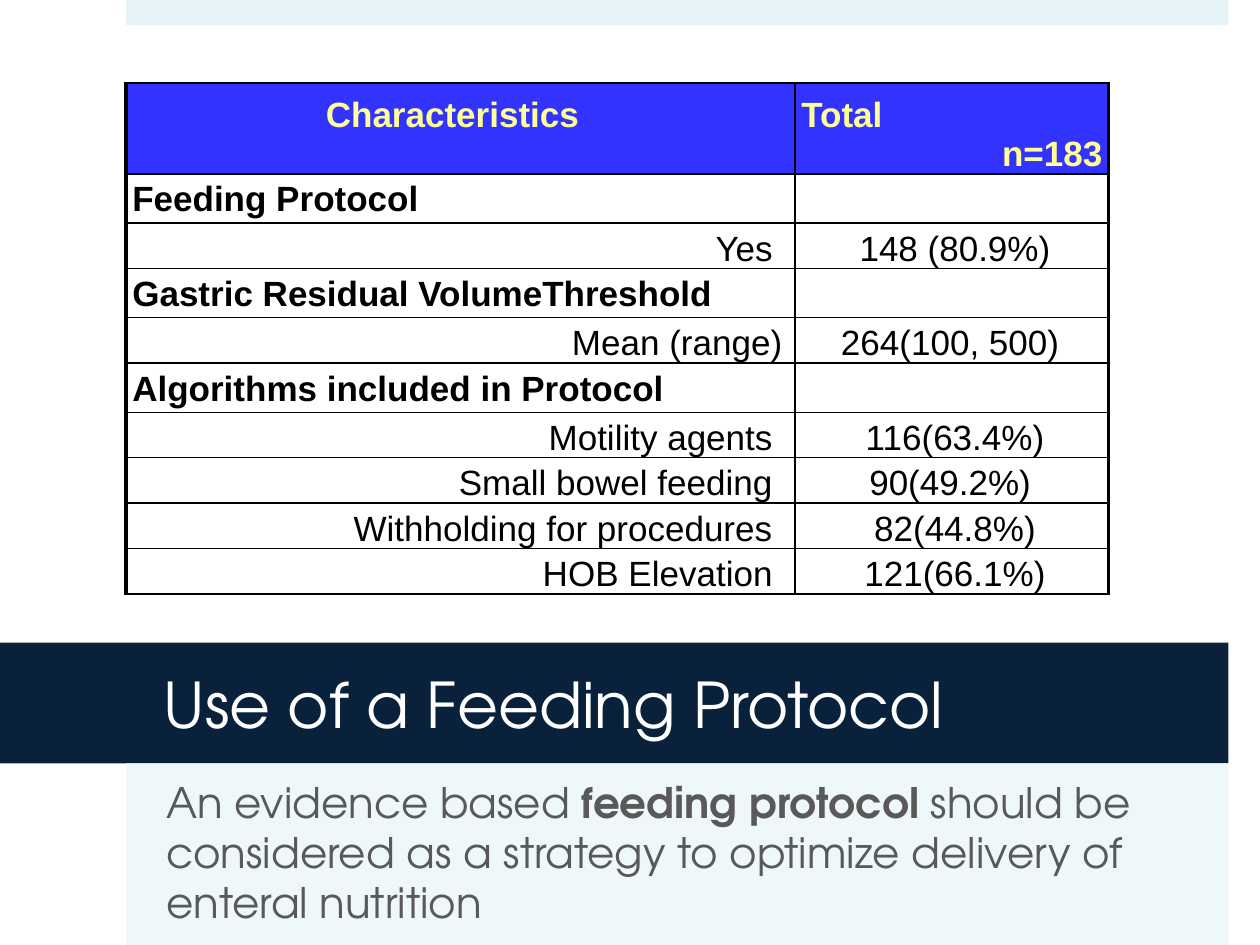
import pptx
import pptx.util
import pptx.dml.color
import pptx.enum.shapes
import pptx.enum.text
import pptx.oxml.ns
import lxml.etree

Inches, Pt = pptx.util.Inches, pptx.util.Pt
ALIGN = pptx.enum.text.PP_ALIGN
ANCHOR = pptx.enum.text.MSO_ANCHOR

# Content
TITLE = "Use of a Feeding Protocol"
ADVICE = [
    ("An evidence based ", False),
    ("feeding protocol", True),
    (" should be considered as a strategy to optimize delivery of enteral nutrition", False),
]
HEAD = ("Characteristics ", "Total", "n=183")
ROWS = [  # a row without a value is a group heading
    ("Feeding Protocol", ""),
    ("Yes ", "148 (80.9%)"),
    ("Gastric Residual VolumeThreshold", ""),
    ("Mean (range)", "264(100, 500) "),
    ("Algorithms included in Protocol", ""),
    ("Motility agents ", "116(63.4%)"),
    ("Small bowel feeding ", "90(49.2%) "),
    ("Withholding for procedures ", "82(44.8%)"),
    ("HOB Elevation ", "121(66.1%)"),
]

# Look
COLORS = {
    "strip": "E6F4F8", "panel": "EEF8FB", "navy": "09213B", "gray": "595959",
    "blue": "3333FF", "yellow": "FFFF99", "white": "FFFFFF", "black": "000000",
}
SANS, ROUND = "Arial", "TeX Gyre Adventor"
COLS = (5.31, 2.49)
HEAD_H, ROW_H = 0.72, 0.36
THIN, THICK = 1, 2.25


def color(name):
    return pptx.dml.color.RGBColor.from_string(COLORS[name])


def add_run(para, text, font, size, tint, bold=False):
    run = para.add_run()
    run.text = text
    run.font.name, run.font.size, run.font.bold = font, Pt(size), bold
    run.font.color.rgb = color(tint)


def add_rect(slide, box, fill):
    shape = slide.shapes.add_shape(
        pptx.enum.shapes.MSO_SHAPE.RECTANGLE, *map(Inches, box))
    shape.shadow.inherit = False
    shape.fill.solid()
    shape.fill.fore_color.rgb = color(fill)
    shape.line.fill.background()
    return shape


def add_panel(slide, box, fill, insets, anchor, runs, size, tint):
    frame = add_rect(slide, box, fill).text_frame
    frame.word_wrap = True
    frame.vertical_anchor = anchor
    (frame.margin_left, frame.margin_top,
     frame.margin_right, frame.margin_bottom) = map(Inches, insets)
    para = frame.paragraphs[0]
    para.alignment = ALIGN.LEFT
    for text, bold in runs:
        add_run(para, text, ROUND, size, tint, bold)


def set_lines(cell, left, right):
    props = cell._tc.get_or_add_tcPr()
    qn = pptx.oxml.ns.qn
    for side, width in zip("LRTB", (left, right, THIN, THIN)):
        line = lxml.etree.SubElement(props, qn("a:ln" + side), w=str(int(Pt(width))))
        fill = lxml.etree.SubElement(line, qn("a:solidFill"))
        lxml.etree.SubElement(fill, qn("a:srgbClr"), val=COLORS["black"])


def fill_cell(cell, col, parts, fill, tint, bold, top, right):
    """Each part is a (text, alignment) paragraph."""
    set_lines(cell, *((THICK, THIN) if col == 0 else (THIN, THICK)))
    cell.fill.solid()
    cell.fill.fore_color.rgb = color(fill)
    cell.margin_left, cell.margin_right = Inches(0.05), Inches(right)
    cell.margin_top, cell.margin_bottom = Inches(top), 0
    frame = cell.text_frame
    for i, (text, align) in enumerate(parts):
        para = frame.add_paragraph() if i else frame.paragraphs[0]
        para.alignment = align
        para.font.size = Pt(20)
        if text:
            add_run(para, text, SANS, 20, tint, bold)


def add_grid(slide):
    grid = slide.shapes.add_table(
        len(ROWS) + 1, len(COLS), Inches(1), Inches(0.66),
        Inches(sum(COLS)), Inches(HEAD_H + ROW_H * len(ROWS))).table
    for col, width in zip(grid.columns, COLS):
        col.width = Inches(width)
    for i, row in enumerate(grid.rows):
        row.height = Inches(ROW_H if i else HEAD_H)

    # Header row
    name, total, count = HEAD
    heads = [[(name, ALIGN.CENTER)], [(total, ALIGN.LEFT), (count, ALIGN.RIGHT)]]
    for col, parts in enumerate(heads):
        fill_cell(grid.cell(0, col), col, parts, "blue", "yellow", True,
                  0.1, 0.05 if col else 0.1)

    # Body rows
    for i, (label, value) in enumerate(ROWS, 1):
        side = ALIGN.RIGHT if value else ALIGN.LEFT
        fill_cell(grid.cell(i, 0), 0, [(label, side)], "white", "black",
                  not value, 0.05, 0.1)
        fill_cell(grid.cell(i, 1), 1, [(value, ALIGN.CENTER)], "white", "black",
                  False, 0.05, 0)


def main():
    deck = pptx.Presentation()
    deck.slide_width, deck.slide_height = Inches(10), Inches(7.5)
    slide = deck.slides.add_slide(deck.slide_layouts[6])

    # Top strip, title band, advice panel, table
    add_rect(slide, (1, 0, 8.75, 0.2), "strip")
    add_panel(slide, (0, 5.1, 9.75, 0.96), "navy", (1.3, 0.05, 0.3, 0.05),
              ANCHOR.MIDDLE, [(TITLE, False)], 36, "white")
    add_panel(slide, (1, 6.06, 8.75, 1.44), "panel", (0.32, 0.1, 0.3, 0.1),
              ANCHOR.TOP, ADVICE, 24, "gray")
    add_grid(slide)
    deck.save("out.pptx")


if __name__ == "__main__":
    main()
